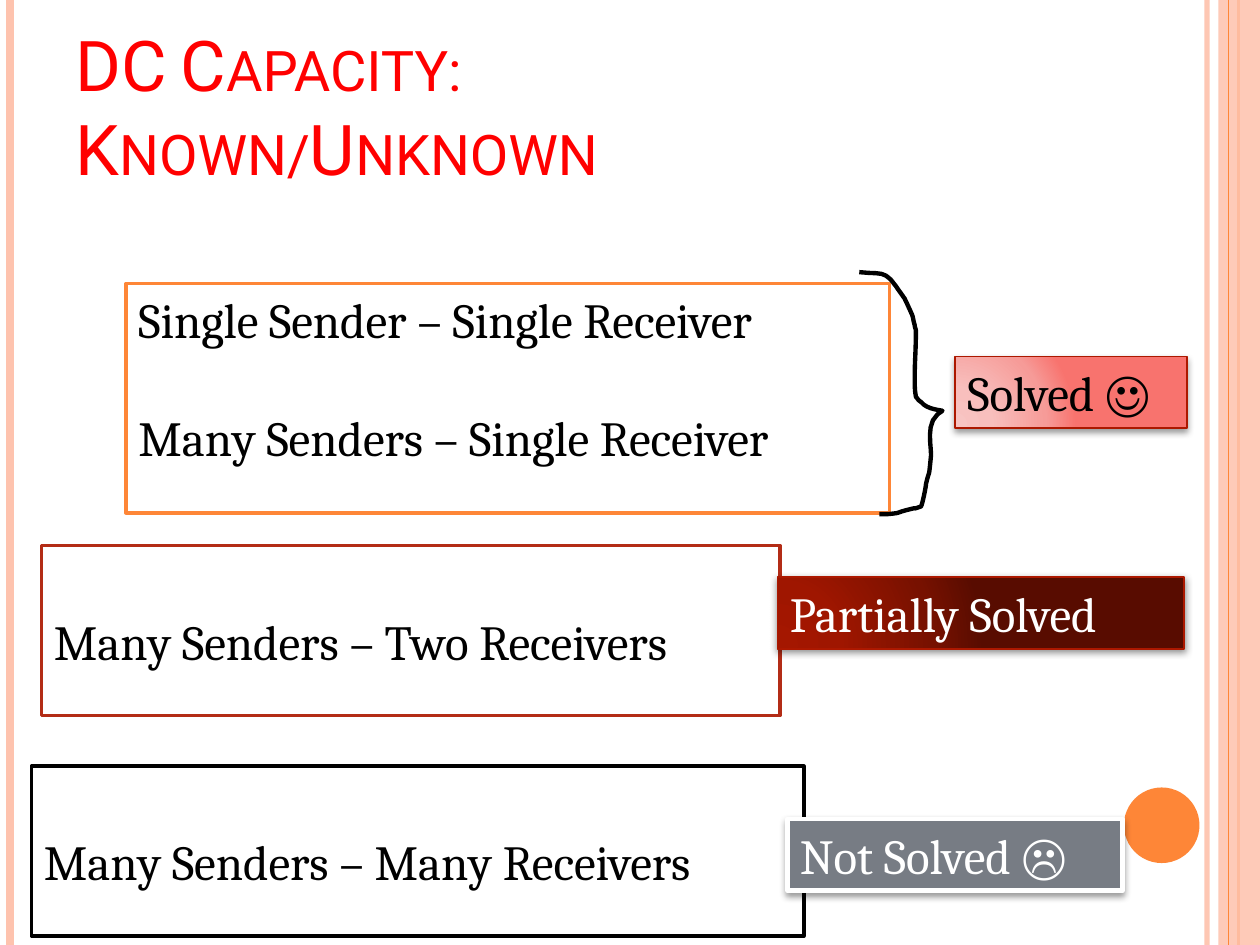
from pptx import Presentation
from pptx.dml.color import RGBColor
from pptx.enum.shapes import MSO_CONNECTOR, MSO_SHAPE
from pptx.enum.text import MSO_ANCHOR, PP_ALIGN
from pptx.oxml import parse_xml
from pptx.oxml.ns import nsdecls, qn
from pptx.util import Inches, Pt
from lxml.etree import SubElement

COLORS = {
    "peach": "FEC3AE", "orange": "FE8637", "title": "FF0000", "brick": "B32C16",
    "edge": "AC1800", "gray": "777C84", "black": "000000", "white": "FFFFFF",
}
PINK_STOPS = [(0, "F8C5C3"), (30, "F8BFBD"), (75, "F69B98"), (100, "F8736E")]
RED_STOPS = [(0, "A41700"), (30, "9F1600"), (75, "771100"), (100, "580C00")]
BRACE_START = (6.82, 2.16)
BRACE_CURVES = [
    (6.99, 2.18, 7.02, 2.14, 7.11, 2.27), (7.13, 2.3, 7.16, 2.34, 7.18, 2.37),
    (7.2, 2.41, 7.24, 2.5, 7.24, 2.5), (7.25, 2.53, 7.25, 2.55, 7.26, 2.58),
    (7.26, 2.6, 7.27, 2.61, 7.27, 2.63), (7.27, 2.75, 7.26, 2.88, 7.26, 3),
    (7.26, 3.05, 7.26, 3.1, 7.27, 3.15), (7.28, 3.16, 7.29, 3.18, 7.31, 3.19),
    (7.35, 3.24, 7.42, 3.25, 7.48, 3.26), (7.47, 3.27, 7.45, 3.28, 7.44, 3.29),
    (7.35, 3.37, 7.39, 3.53, 7.39, 3.61), (7.37, 3.82, 7.38, 3.71, 7.35, 3.84),
    (7.35, 3.86, 7.32, 4.01, 7.31, 4.02), (7.19, 4.06, 7.34, 4.01, 7.19, 4.05),
    (7.11, 4.07, 7.16, 4.07, 7.05, 4.08), (7.03, 4.08, 7.01, 4.08, 6.98, 4.08),
]


def rgb(name):
    return RGBColor.from_string(COLORS[name])


def curve_points(start, curves, steps=6):
    x0, y0 = start
    for x1, y1, x2, y2, x3, y3 in curves:
        for step in range(1, steps + 1):
            t = step / steps
            weights = ((1 - t) ** 3, 3 * t * (1 - t) ** 2, 3 * t * t * (1 - t), t ** 3)
            yield tuple(Inches(sum(w * v for w, v in zip(weights, axis)))
                        for axis in ((x0, x1, x2, x3), (y0, y1, y2, y3)))
        x0, y0 = x3, y3


class SlideBuilder:
    heading_font = "Roboto"
    body_font = "Cambria"
    body_size = 28

    def __init__(self, page):
        self.page = page

    def set_alpha(self, shape, percent):
        color = next(shape._element.spPr.iter(qn("a:srgbClr")))
        SubElement(color, qn("a:alpha"), val=str(percent * 1000))

    def rail(self, x, color, width, alpha=100):
        line = self.page.shapes.add_connector(
            MSO_CONNECTOR.STRAIGHT, Inches(x), 0, Inches(x), Inches(7.5))
        line.line.color.rgb = rgb(color)
        line.line.width = Pt(width)
        SubElement(line._element.spPr, qn("a:effectLst"))
        if alpha < 100:
            self.set_alpha(line, alpha)

    def shape(self, kind, place, fill=None, line=None, width=1):
        shape = self.page.shapes.add_shape(kind, *map(Inches, place))
        if fill:
            shape.fill.solid()
            shape.fill.fore_color.rgb = rgb(fill)
        if line:
            shape.line.color.rgb = rgb(line)
            shape.line.width = Pt(width)
        else:
            shape.line.fill.background()
        shape.shadow.inherit = False
        return shape

    def put_text(self, shape, lines, color, top=0.05):
        frame = shape.text_frame
        frame.word_wrap = True
        frame.vertical_anchor = MSO_ANCHOR.TOP
        frame.margin_top = Inches(top)
        frame.text = "\n".join(lines)
        for index, para in enumerate(frame.paragraphs):
            para.alignment = PP_ALIGN.LEFT
            para.font.name = self.body_font
            para.font.size = Pt(self.body_size)
            para.font.color.rgb = rgb(color)
            if index:
                para.space_before = Pt(33.5)

    def case_box(self, place, lines, line, top=0.05):
        shape = self.shape(MSO_SHAPE.RECTANGLE, place, "white", line, 2)
        self.put_text(shape, lines, "black", top)

    def status(self, place, text, color, line, width=1, fill=None, stops=(), blur=(2, 40)):
        shape = self.shape(MSO_SHAPE.RECTANGLE, place, fill, line, width)
        if stops:
            self.radial_fill(shape, stops)
        self.cast_shadow(shape, *blur)
        self.put_text(shape, [text], color)

    def radial_fill(self, shape, stops):
        marks = "".join(f'<a:gs pos="{pos * 1000}"><a:srgbClr val="{color}"/></a:gs>'
                        for pos, color in stops)
        shape._element.spPr.insert(2, parse_xml(
            f'<a:gradFill {nsdecls("a")} rotWithShape="1"><a:gsLst>{marks}</a:gsLst>'
            '<a:path path="circle"><a:fillToRect l="5000" t="100000" r="120000" '
            'b="10000"/></a:path></a:gradFill>'))

    def cast_shadow(self, shape, distance, alpha):
        effects = shape._element.spPr.find(qn("a:effectLst"))
        effects.append(parse_xml(
            f'<a:outerShdw {nsdecls("a")} blurRad="{Pt(4)}" dist="{Pt(distance)}" '
            f'dir="5400000" rotWithShape="0"><a:srgbClr val="{COLORS["black"]}">'
            f'<a:alpha val="{alpha * 1000}"/></a:srgbClr></a:outerShdw>'))

    def title(self, place, text):
        box = self.page.shapes.add_textbox(*map(Inches, place))
        frame = box.text_frame
        frame.word_wrap = True
        frame.vertical_anchor = MSO_ANCHOR.BOTTOM
        para = frame.paragraphs[0]
        para.text = text
        para.font.name = self.heading_font
        para.font.size = Pt(40)
        para.font.color.rgb = rgb("title")
        for span in para.runs:
            span._r.get_or_add_rPr().set("cap", "small")

    def brace(self, start, curves):
        builder = self.page.shapes.build_freeform(*map(Inches, start))
        builder.add_line_segments(list(curve_points(start, curves)), close=False)
        shape = builder.convert_to_shape()
        shape.fill.background()
        shape.line.color.rgb = rgb("black")
        shape.line.width = Pt(2.5)
        shape.shadow.inherit = False


def main():
    deck = Presentation()
    deck.slide_width, deck.slide_height = Inches(10), Inches(7.5)
    slide = SlideBuilder(deck.slides.add_slide(deck.slide_layouts[6]))

    slide.rail(9.58, "peach", 3, 93)
    slide.rail(0.08, "peach", 4.5)
    slide.rail(9.83, "orange", 1.5)
    band = slide.shape(MSO_SHAPE.RECTANGLE, (9.67, 0, 0.33, 7.5), "peach")
    slide.set_alpha(band, 87)
    slide.rail(9.75, "orange", 0.75)
    slide.shape(MSO_SHAPE.OVAL, (8.92, 6.25, 0.6, 0.6), "orange")

    slide.title((0.5, 0.3, 9.17, 1.25), "DC Capacity:\vKnown/Unknown")
    slide.case_box((1, 2.25, 6.06, 1.82),
                   ["Single Sender – Single Receiver", "Many Senders – Single Receiver"],
                   "orange")
    slide.brace(BRACE_START, BRACE_CURVES)
    slide.status((7.58, 2.83, 1.84, 0.57), "Solved ☺", "black", "edge", stops=PINK_STOPS)
    slide.case_box((0.33, 4.33, 5.86, 1.35), ["Many Senders – Two Receivers"], "brick", 0.52)
    slide.status((6.17, 4.58, 3.23, 0.57), "Partially Solved", "white", "edge",
                 stops=RED_STOPS, blur=(1.6, 42))
    slide.case_box((0.25, 6.08, 6.13, 1.35), ["Many Senders – Many Receivers"], "black", 0.52)
    slide.status((6.25, 6.5, 2.66, 0.57), "Not Solved ☹", "white", "white", 2.75, fill="gray")
    deck.save("out.pptx")


if __name__ == "__main__":
    main()
